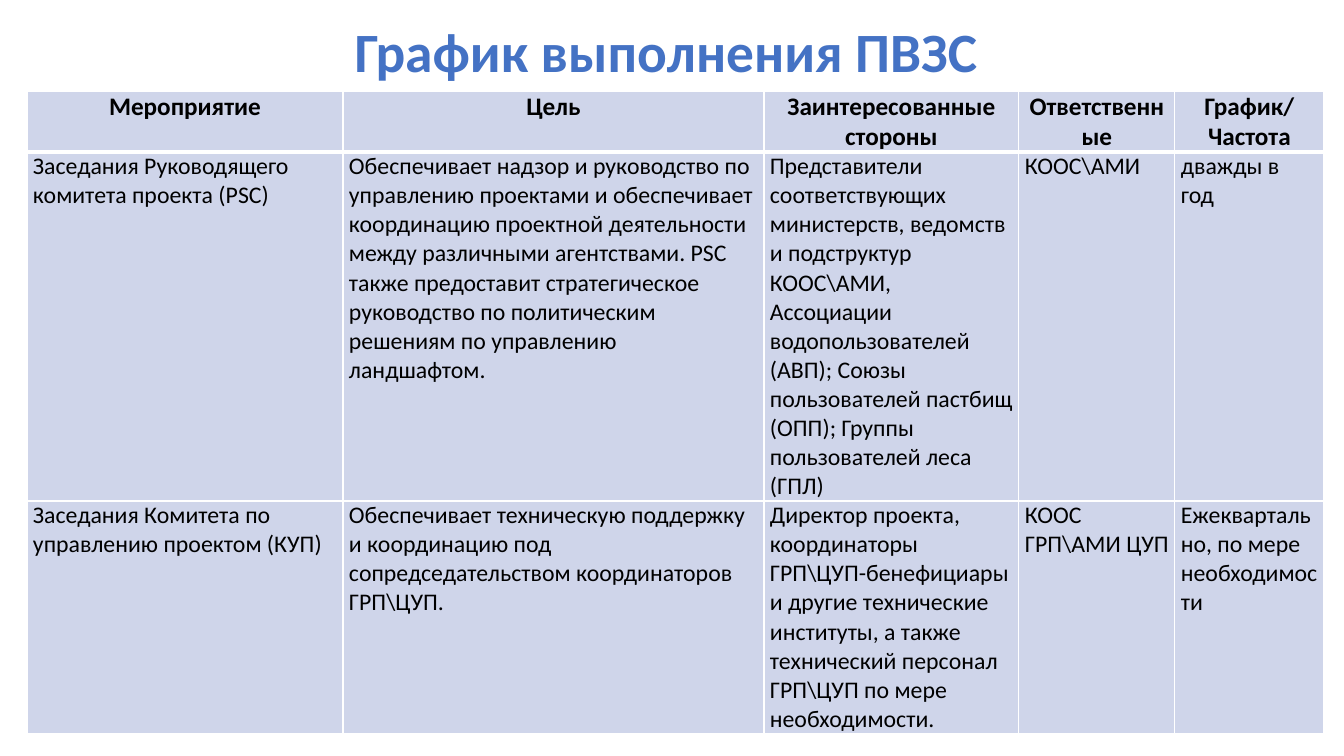
from lxml.etree import SubElement
from pptx import Presentation
from pptx.dml.color import RGBColor
from pptx.enum.text import MSO_ANCHOR, PP_ALIGN
from pptx.oxml.ns import qn
from pptx.util import Emu, Pt

COLORS = {"title": "4472C4", "text": "000000", "cell": "CFD5EA", "border": "FFFFFF"}
FONT = "Calibri"
TITLE = "График выполнения ПВЗС "
COLUMN_WIDTHS = [316, 421, 255, 156, 149]
ROW_HEIGHTS = [61, 349, 233]
ROWS = [
    ["Мероприятие", "Цель", "Заинтересованные стороны", "Ответственные", "График/\nЧастота"],
    [
        "Заседания Руководящего комитета проекта (PSC)",
        "Обеспечивает надзор и руководство по управлению проектами и обеспечивает "
        "координацию проектной деятельности между различными агентствами. PSC также "
        "предоставит стратегическое руководство по политическим решениям по "
        "управлению ландшафтом.",
        "Представители соответствующих министерств, ведомств и подструктур КООС\\АМИ, "
        "Ассоциации водопользователей (АВП); Союзы пользователей пастбищ (ОПП); "
        "Группы пользователей леса (ГПЛ)",
        "КООС\\АМИ",
        "дважды в год",
    ],
    [
        "Заседания Комитета по управлению проектом (КУП)",
        "Обеспечивает техническую поддержку и координацию под сопредседательством "
        "координаторов ГРП\\ЦУП.",
        "Директор проекта, координаторы ГРП\\ЦУП-бенефициары и другие технические "
        "институты, а также технический персонал ГРП\\ЦУП по мере необходимости.",
        "КООС ГРП\\АМИ ЦУП",
        "Ежеквартально, по мере необходимости",
    ],
]


def px(length):
    return Emu(round(length * 914400 / 100.8))


def format_text(text_frame, size, color, bold, alignment):
    for paragraph in text_frame.paragraphs:
        paragraph.alignment = alignment
        for run in paragraph.runs:
            run.font.name = FONT
            run.font.size = Pt(size)
            run.font.bold = bold
            run.font.color.rgb = RGBColor.from_string(COLORS[color])


def add_title(slide, left, top, width, height):
    title = slide.shapes.add_textbox(px(left), px(top), px(width), px(height))
    text_frame = title.text_frame
    text_frame.word_wrap = True
    text_frame.vertical_anchor = MSO_ANCHOR.MIDDLE
    text_frame.text = TITLE
    format_text(text_frame, 39.6, "title", True, PP_ALIGN.CENTER)


def set_borders(cell, top, bottom):
    properties = cell._tc.get_or_add_tcPr()
    for side, points in (("L", 1), ("R", 1), ("T", top), ("B", bottom)):
        line = SubElement(properties, qn(f"a:ln{side}"), w=str(Pt(points)))
        fill = SubElement(line, qn("a:solidFill"))
        SubElement(fill, qn("a:srgbClr"), val=COLORS["border"])


def format_cell(cell, text, row_index):
    is_header = row_index == 0
    cell.margin_left = cell.margin_right = px(6)
    cell.margin_top = cell.margin_bottom = 0
    set_borders(cell, 3 if row_index == 1 else 1, 3 if is_header else 1)
    cell.fill.solid()
    cell.fill.fore_color.rgb = RGBColor.from_string(COLORS["cell"])
    cell.text_frame.text = text
    alignment = PP_ALIGN.CENTER if is_header else PP_ALIGN.LEFT
    format_text(cell.text_frame, 18 if is_header else 17, "text", is_header, alignment)


def add_schedule(slide, left, top, width, height):
    frame = slide.shapes.add_table(
        len(ROWS), len(COLUMN_WIDTHS), px(left), px(top), px(width), px(height)
    )
    table = frame.table
    for column, column_width in zip(table.columns, COLUMN_WIDTHS):
        column.width = px(column_width)
    for row_index, (row, row_height) in enumerate(zip(table.rows, ROW_HEIGHTS)):
        row.height = px(row_height)
        for cell, text in zip(row.cells, ROWS[row_index]):
            format_cell(cell, text, row_index)


def main():
    presentation = Presentation()
    presentation.slide_width = px(1344)
    presentation.slide_height = px(756)
    slide = presentation.slides.add_slide(presentation.slide_layouts[6])
    add_title(slide, 93, 9, 1159, 82)
    add_schedule(slide, 27, 91, sum(COLUMN_WIDTHS), sum(ROW_HEIGHTS))
    presentation.save("out.pptx")


if __name__ == "__main__":
    main()
